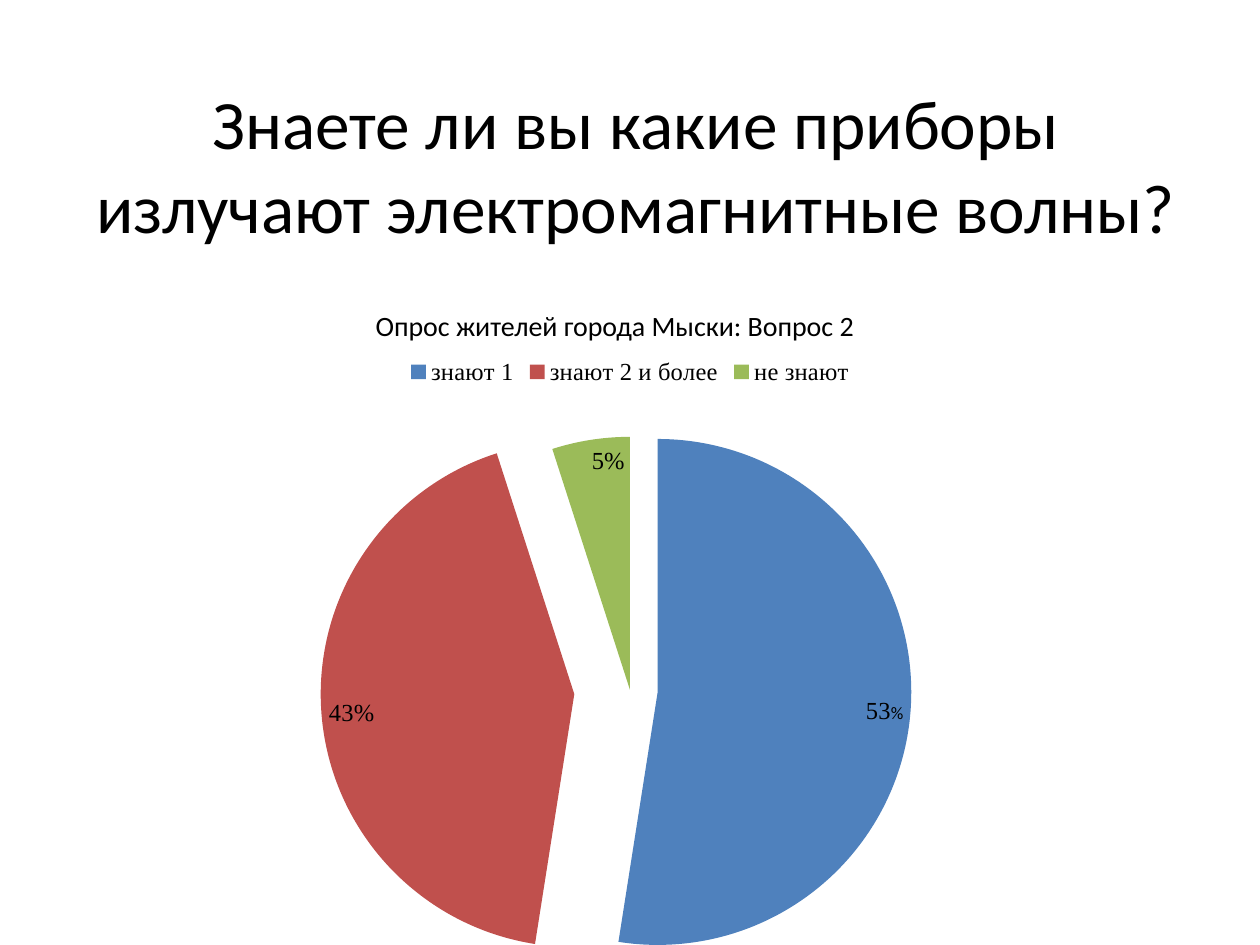
from dataclasses import dataclass

from lxml.etree import SubElement
from pptx import Presentation
from pptx.chart.data import CategoryChartData
from pptx.dml.color import RGBColor
from pptx.enum.chart import XL_CHART_TYPE as ChartType
from pptx.enum.chart import XL_LABEL_POSITION as LabelPosition
from pptx.enum.chart import XL_LEGEND_POSITION as LegendPosition
from pptx.enum.text import MSO_ANCHOR as Anchor
from pptx.enum.text import PP_ALIGN as Align
from pptx.oxml import parse_xml
from pptx.oxml.ns import nsdecls, qn
from pptx.util import Emu, Pt

EMU_PER_PX = 914400 // 126


@dataclass(frozen=True)
class Theme:
    sans: str = "Calibri"
    serif: str = "Times New Roman"
    ink: str = "000000"
    title_size: float = 39.6
    subtitle_size: float = 16
    label_size: float = 14
    small_size: float = 10


THEME = Theme()

# category, value, colour, explosion in percent of the radius
ANSWERS = [
    ("знают 1", 53, "4F81BD", 11),
    ("знают 2 и более", 43, "C0504D", 22),
    ("не знают", 5, "9BBB59", 0),
]


def px(length):
    return Emu(length * EMU_PER_PX)


def style_font(font, size, name=THEME.sans):
    font.size = Pt(size)
    font.name = name
    font.color.rgb = RGBColor.from_string(THEME.ink)


def add_span(para, text, *, size, name=THEME.sans):
    span = para.add_run()
    span.text = text
    style_font(span.font, size, name)


def fill_placeholder(box, bounds, text, *, size, align, anchor, top, indent=0):
    """Move a placeholder and give it one unbulleted paragraph."""
    box.left, box.top, box.width, box.height = map(px, bounds)
    frame = box.text_frame
    frame.word_wrap = True
    frame.vertical_anchor = anchor
    frame.margin_top = px(top)
    para = frame.paragraphs[0]
    para.alignment = align
    para.space_before = Pt(0)
    properties = para._p.get_or_add_pPr()
    properties.set("marL", str(px(indent)))
    properties.set("indent", "0")
    SubElement(properties, qn("a:buNone"))
    add_span(para, text, size=size)


def set_plot_layout(chart, **fractions):
    """Fix the inner plot area as fractions of the chart."""
    plot_area = chart._chartSpace.chart.plotArea
    for old in plot_area.findall(qn("c:layout")):
        plot_area.remove(old)
    sides = "".join(f'<c:{side} val="{value}"/>' for side, value in fractions.items())
    plot_area.insert(0, parse_xml(
        f'<c:layout {nsdecls("c")}><c:manualLayout><c:layoutTarget val="inner"/>'
        f'<c:xMode val="edge"/><c:yMode val="edge"/>{sides}</c:manualLayout></c:layout>'))


def style_slice(point, index, colour, explosion):
    point.format.fill.solid()
    point.format.fill.fore_color.rgb = RGBColor.from_string(colour)
    if explosion:
        slice_xml = point._element.xpath(f"c:dPt[c:idx/@val='{index}']")[0]
        slice_xml.insert(1, parse_xml(
            f'<c:explosion {nsdecls("c")} val="{explosion}"/>'))


def label_slices(plot):
    plot.has_data_labels = False
    series = plot.series[0]
    labels = series.data_labels
    labels.show_percentage = True
    labels.show_value = False
    labels.number_format = "0%"
    labels.number_format_is_linked = False
    labels.position = LabelPosition.INSIDE_END
    style_font(labels.font, THEME.label_size, THEME.serif)

    first_label = series.points[0].data_label
    para = first_label.text_frame.paragraphs[0]
    add_span(para, "53", size=THEME.label_size, name=THEME.serif)
    add_span(para, "%", size=THEME.small_size)
    first_label.position = LabelPosition.INSIDE_END


def add_survey_pie(page, bounds):
    data = CategoryChartData()
    data.categories = [answer[0] for answer in ANSWERS]
    data.add_series("Series 1", [answer[1] for answer in ANSWERS])
    chart = page.shapes.add_chart(ChartType.PIE, *map(px, bounds), data).chart
    chart.has_title = False
    style_font(chart.font, THEME.small_size)
    chart.has_legend = True
    chart.legend.position = LegendPosition.TOP
    chart.legend.include_in_layout = False
    style_font(chart.legend.font, THEME.label_size, THEME.serif)
    set_plot_layout(chart, x=0, y=0.155, w=1, h=0.844)

    plot = chart.plots[0]
    plot.vary_by_categories = True
    for index, (_, _, colour, explosion) in enumerate(ANSWERS):
        style_slice(plot.series[0].points[index], index, colour, explosion)
    label_slices(plot)


def main():
    deck = Presentation()
    deck.slide_width, deck.slide_height = px(1260), px(945)
    page = deck.slides.add_slide(deck.slide_layouts[1])
    title, subtitle = page.placeholders
    fill_placeholder(title, (69, 78, 1134, 158),
                     "Знаете ли вы какие приборы излучают электромагнитные волны?",
                     size=THEME.title_size, align=Align.CENTER,
                     anchor=Anchor.MIDDLE, top=20)
    fill_placeholder(subtitle, (325, 276, 868, 108),
                     "Опрос жителей города Мыски: Вопрос 2",
                     size=THEME.subtitle_size, align=Align.LEFT,
                     anchor=Anchor.TOP, top=33, indent=38)
    add_survey_pie(page, (0, 344, 1260, 601))
    deck.save("out.pptx")


if __name__ == "__main__":
    main()
